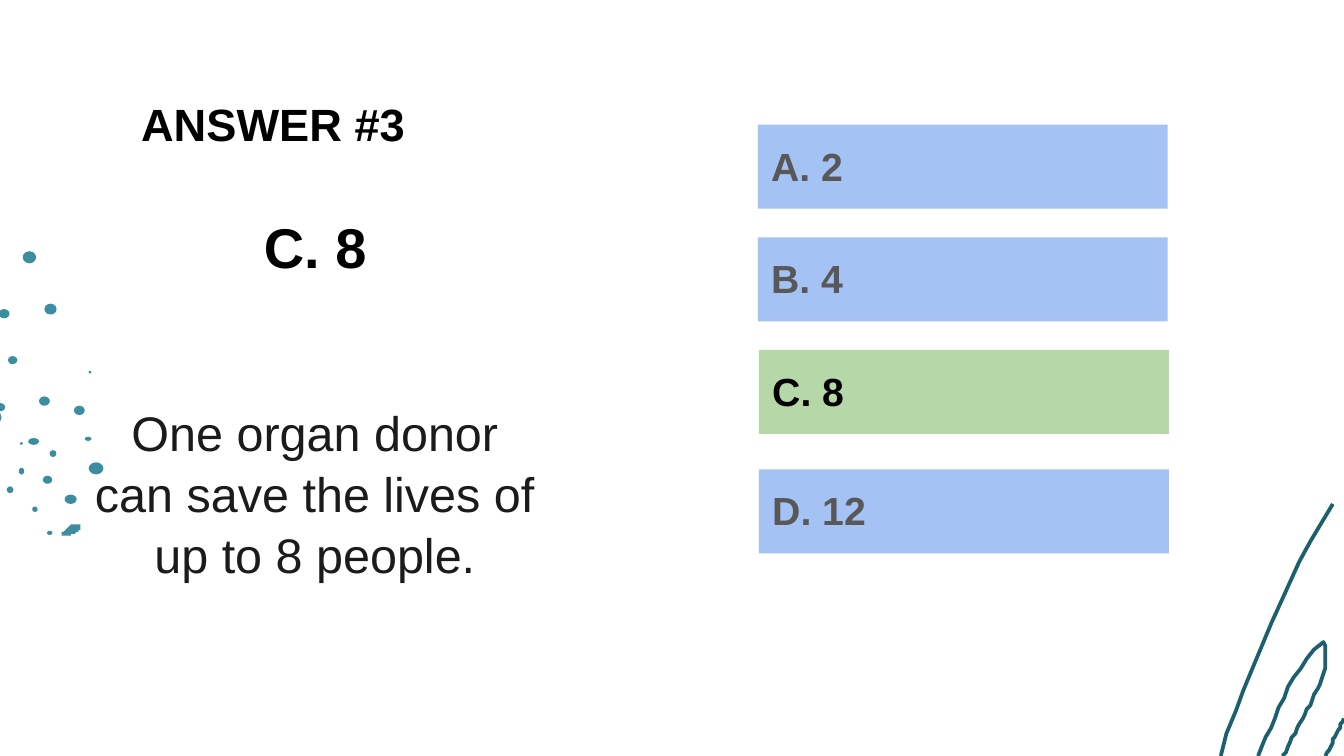
from typing import NamedTuple

from lxml import etree
from pptx import Presentation
from pptx.dml.color import RGBColor
from pptx.enum import shapes as kinds, text as txt
from pptx.oxml import ns
from pptx.util import Pt


class Dot(NamedTuple):
    x: float
    y: float
    w: float
    h: float


class Bar(NamedTuple):
    label: str
    x: float
    y: float
    fill: str = "A4C2F4"
    ink: str = "585858"


TEAL = "3C8DA0"
DEEP = "1C5F6F"

DOTS = [
    Dot(-8.6, 219.6, 9.4, 7.9), Dot(10.8, 236.9, 1.4, 1.4),
    Dot(10.1, 250.6, 2.9, 3.6), Dot(17.3, 271.4, 2.9, 2.9),
    Dot(25.2, 284.4, 2.9, 2.2), Dot(34.6, 265, 6.5, 5),
    Dot(23, 254.9, 5, 4.3), Dot(3.6, 260.6, 3.6, 3.6),
    Dot(26.6, 241.2, 3.6, 3.6), Dot(15.1, 234.7, 5.8, 3.6),
    Dot(20.9, 212.4, 5.8, 5), Dot(-2.2, 216, 5, 4.3),
    Dot(4.3, 190.8, 5, 4.3), Dot(-0.7, 165.6, 5.8, 5),
    Dot(47.5, 198.7, 1.4, 1.4), Dot(39.6, 217.4, 5.8, 5),
    Dot(45.4, 234, 3.6, 2.2), Dot(47.5, 247.7, 7.9, 6.5),
    Dot(23.8, 162.7, 6.5, 5.8), Dot(12.2, 134.6, 7.2, 6.5),
]

LEAF = [(38.2, 280.8), (36.7, 282.2), (34.6, 284.4), (33.1, 285.8),
        (33.4, 286.3), (33.6, 286.8), (33.8, 287.3),
        (36, 287.3), (37.4, 286.6), (39.6, 285.8),
        (42.5, 285.1), (43.9, 283), (43.2, 280.8),
        (41.5, 280.5), (39.8, 280.5), (38.2, 280.8)]

STEMS = [
    [(653.5, 405), (669, 358), (690, 309), (713.6, 270)],
    [(674, 405), (683, 386), (690, 361), (708.7, 344),
     (713, 352), (709, 364), (703, 375),
     (698, 386), (692, 395), (687.3, 405)],
    [(710.5, 405), (713.5, 398), (717, 391), (720, 385)],
]

BARS = [
    Bar("A. 2", 406, 66.8),
    Bar("B. 4", 406, 127.2),
    Bar("C. 8", 406.6, 187.5, "B6D7A8", "000000"),
    Bar("D. 12", 406.6, 251.5),
]


def tint(code: str) -> RGBColor:
    return RGBColor.from_string(code)


def paint(shape, fill: str) -> None:
    shape.shadow.inherit = False
    shape.fill.solid()
    shape.fill.fore_color.rgb = tint(fill)
    shape.line.fill.background()


def place(shape, x: float, y: float, w: float, h: float) -> None:
    shape.left, shape.top, shape.width, shape.height = map(Pt, (x, y, w, h))


def frame(shape, anchor):
    box = shape.text_frame
    box.word_wrap = True
    box.auto_size = txt.MSO_AUTO_SIZE.NONE
    box.vertical_anchor = anchor
    box.margin_left = box.margin_right = Pt(7.2)
    box.margin_top = box.margin_bottom = Pt(7.2)
    return box


def write(para, words: str, *, size: float, ink: str = "000000",
          bold: bool = True, align=txt.PP_ALIGN.LEFT,
          before: float = 0, lead: float = 1) -> None:
    props = para._p.get_or_add_pPr()
    props.set("marL", "0")
    props.set("indent", "0")
    etree.SubElement(props, ns.qn("a:buNone"))
    para.alignment = align
    para.space_before = Pt(before)
    para.line_spacing = lead
    run = para.add_run()
    run.text = words
    run.font.name = "Arial"
    run.font.size = Pt(size)
    run.font.bold = bold
    run.font.color.rgb = tint(ink)


def trace(knots: list, steps: int = 12) -> list:
    points = [knots[0]]
    for i in range(0, len(knots) - 1, 3):
        a, b, c, d = knots[i:i + 4]
        for n in range(1, steps + 1):
            t = n / steps
            s = 1 - t
            points.append(tuple(
                s**3 * p + 3 * s * s * t * q + 3 * s * t * t * r + t**3 * e
                for p, q, r, e in zip(a, b, c, d)))
    return points


def curve(group, knots: list, close: bool):
    points = trace(knots)
    pen = group.shapes.build_freeform(*points[0], scale=Pt(1))
    pen.add_line_segments(points[1:], close=close)
    return pen.convert_to_shape()


def draw_dot(group, dot: Dot) -> None:
    oval = group.shapes.add_shape(kinds.MSO_SHAPE.OVAL, *map(Pt, dot))
    paint(oval, TEAL)


def draw_stem(group, knots: list) -> None:
    stem = curve(group, knots, False)
    stem.shadow.inherit = False
    stem.fill.background()
    stem.line.color.rgb = tint(DEEP)
    stem.line.width = Pt(2)


def draw_bar(slide, bar: Bar) -> None:
    rect = slide.shapes.add_shape(
        kinds.MSO_SHAPE.RECTANGLE, Pt(bar.x), Pt(bar.y), Pt(219.6), Pt(45))
    paint(rect, bar.fill)
    box = frame(rect, txt.MSO_ANCHOR.TOP)
    write(box.paragraphs[0], bar.label, size=21, ink=bar.ink, lead=1.08)


def main() -> None:
    deck = Presentation()
    deck.slide_width, deck.slide_height = Pt(720), Pt(405)
    slide = deck.slides.add_slide(deck.slide_layouts[1])
    title, body = slide.placeholders

    spray = slide.shapes.add_group_shape()
    for dot in DOTS:
        draw_dot(spray, dot)
    paint(curve(spray, LEAF, True), TEAL)
    plant = slide.shapes.add_group_shape()
    for knots in STEMS:
        draw_stem(plant, knots)

    for holder in (body, title):
        slide.shapes._spTree.append(holder._element)

    place(body, 39.6, 105.1, 258.5, 276.5)
    box = frame(body, txt.MSO_ANCHOR.TOP)
    mid = txt.PP_ALIGN.CENTER
    write(box.paragraphs[0], "C. 8", size=30, align=mid, lead=1.05)
    write(box.add_paragraph(),
          "One organ donor can save the lives of up to 8 people.",
          size=26, ink="1B1B1B", bold=False, align=mid, before=64, lead=1.05)

    place(title, 68.4, 43.2, 642.2, 45.4)
    box = frame(title, txt.MSO_ANCHOR.MIDDLE)
    write(box.paragraphs[0], "ANSWER #3", size=24.2)

    for bar in BARS:
        draw_bar(slide, bar)
    deck.save("out.pptx")


if __name__ == "__main__":
    main()
